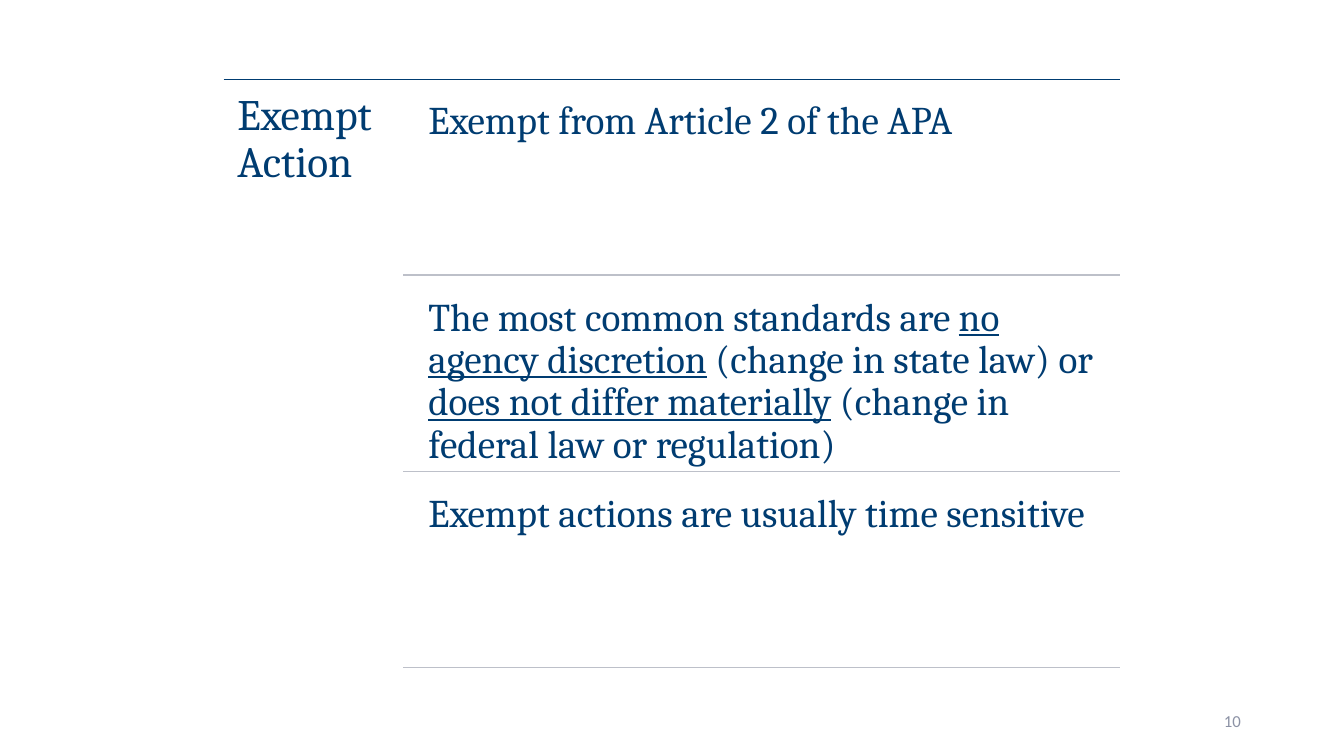
from lxml.etree import SubElement
from pptx import Presentation
from pptx.dml.color import RGBColor
from pptx.enum.shapes import MSO_CONNECTOR as CONN
from pptx.enum.text import MSO_ANCHOR as ANCHOR, MSO_AUTO_SIZE as AUTO, PP_ALIGN as ALIGN
from pptx.oxml.ns import qn
from pptx.util import Pt

PX = 9525
NAVY, RULE_GREY, NUMBER_GREY = "003C71", "BDC0C9", "8C92A5"
LEFT, RIGHT, TOP = 213, 1067, 76
POINT_RULE_LEFT, POINT_LEFT, POINT_HEIGHT = 384, 396, 178
GAP, PITCH = 8, 187
POINTS = [
    [("Exempt from Article 2 of the APA", False)],
    [
        ("The most common standards are ", False),
        ("no agency discretion", True),
        (" (change in state law) or ", False),
        ("does not differ materially", True),
        (" (change in federal law or regulation)", False),
    ],
    [("Exempt actions are usually time sensitive", False)],
]


def rgb(value):
    return RGBColor.from_string(value)


def write(sp, runs, size, font="Cambria", color=NAVY, align=ALIGN.LEFT,
          anchor=ANCHOR.TOP, inset=12, spacing=0.9):
    tf = sp.text_frame
    tf.word_wrap, tf.auto_size, tf.vertical_anchor = True, AUTO.NONE, anchor
    tf.margin_left = tf.margin_top = tf.margin_right = tf.margin_bottom = inset * PX
    p = tf.paragraphs[0]
    p.alignment, p.line_spacing = align, spacing
    for text, underlined in runs:
        r = p.add_run()
        r.text = text
        r.font.name, r.font.size = font, Pt(size)
        r.font.color.rgb = rgb(color)
        r.font.underline = underlined


class Deck:
    """Holds the presentation, its pixel scale and the current slide."""

    def __init__(self):
        self.prs = Presentation()
        self.prs.slide_width, self.prs.slide_height = 1280 * PX, 720 * PX
        self.s = self.prs.slides.add_slide(self.prs.slide_layouts[5])

    def title(self, x, y, w, h, text, **fmt):
        sp = self.s.shapes.title
        sp.left, sp.top, sp.width, sp.height = (v * PX for v in (x, y, w, h))
        write(sp, [(text, False)], **fmt)

    def text(self, x, y, w, h, runs, **fmt):
        sp = self.s.shapes.add_textbox(*(v * PX for v in (x, y, w, h)))
        write(sp, runs, **fmt)

    def rule(self, x1, x2, y, color):
        line = self.s.shapes.add_connector(CONN.STRAIGHT, x1 * PX, y * PX, x2 * PX, y * PX)
        line.line.color.rgb = rgb(color)
        line.line.width = Pt(1)
        SubElement(line._element.spPr, qn("a:effectLst"))


def main():
    deck = Deck()
    deck.text(904, 667, 288, 38, [("10", False)], size=12, font="Calibri",
              color=NUMBER_GREY, align=ALIGN.RIGHT, anchor=ANCHOR.MIDDLE,
              inset=10, spacing=1.0)
    deck.rule(LEFT, RIGHT, TOP, NAVY)
    deck.title(LEFT, TOP, 171, 569, "Exempt Action", size=31, inset=13)
    for i, runs in enumerate(POINTS):
        y = TOP + GAP + i * PITCH
        deck.text(POINT_LEFT, y, RIGHT - POINT_LEFT, POINT_HEIGHT, runs, size=28)
        deck.rule(POINT_RULE_LEFT, RIGHT, y + POINT_HEIGHT, RULE_GREY)
    deck.prs.save("out.pptx")


if __name__ == "__main__":
    main()
